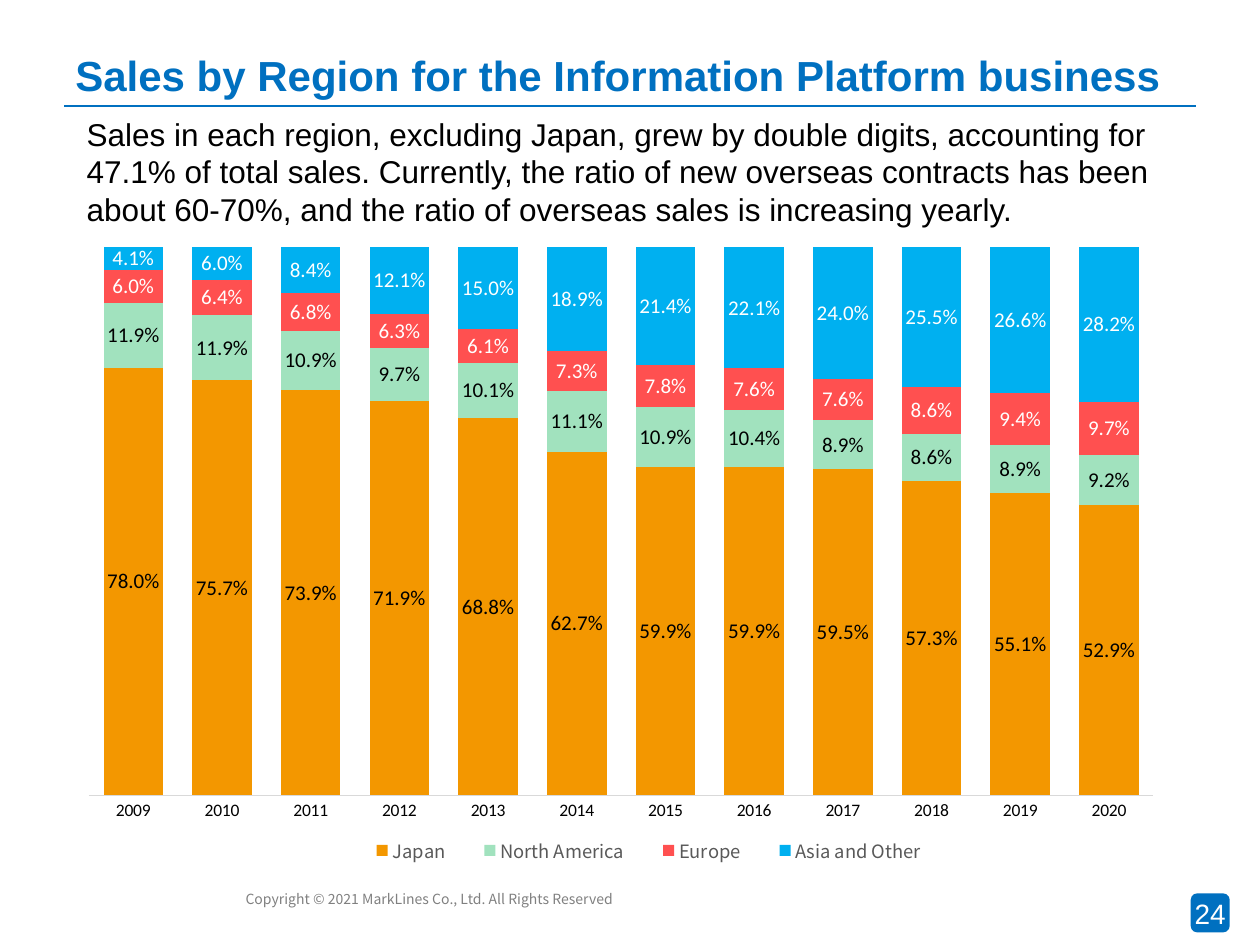
from lxml import etree
from pptx import Presentation
from pptx.chart.data import CategoryChartData
from pptx.dml.color import RGBColor
from pptx.enum.chart import XL_CHART_TYPE, XL_LEGEND_POSITION, XL_TICK_MARK
from pptx.enum.shapes import MSO_CONNECTOR, MSO_SHAPE
from pptx.enum.text import MSO_ANCHOR, PP_ALIGN
from pptx.oxml.ns import qn
from pptx.util import Inches, Pt

STACKED = XL_CHART_TYPE.COLUMN_STACKED_100
BOTTOM = XL_LEGEND_POSITION.BOTTOM
NO_TICK = XL_TICK_MARK.NONE
STRAIGHT = MSO_CONNECTOR.STRAIGHT
ROUNDED = MSO_SHAPE.ROUNDED_RECTANGLE
TOP, MIDDLE = MSO_ANCHOR.TOP, MSO_ANCHOR.MIDDLE
LEFT, CENTER = PP_ALIGN.LEFT, PP_ALIGN.CENTER

WIDE, HIGH = 10, 7.5
COLS, ROWS = 100, 75
COLORS = {
    "blue": "0070C0", "black": "000000", "white": "FFFFFF",
    "gray": "808080", "slate": "595959", "rule": "D9D9D9",
    "orange": "F39700", "green": "A1E2BE", "red": "FF5050", "sky": "00B0F0",
}
FONTS = {
    "title": {"name": "Arial", "size": 24, "bold": True, "color": "blue"},
    "body": {"name": "Arial", "size": 18, "color": "black"},
    "badge": {"name": "Arial", "size": 16, "color": "white"},
    "footer": {"name": "Noto Sans CJK JP", "size": 8, "color": "gray"},
    "legend": {"name": "Noto Sans CJK JP", "size": 10.5, "color": "slate"},
    "axis": {"name": "Calibri", "size": 10, "color": "black"},
    "dark": {"name": "Calibri", "size": 12, "color": "black"},
    "light": {"name": "Calibri", "size": 12, "color": "white"},
}
YEARS = [str(year) for year in range(2009, 2021)]
REGIONS = [
    ("Japan", "orange", "dark",
     [0.78, 0.757, 0.739, 0.719, 0.688, 0.627,
      0.599, 0.599, 0.595, 0.573, 0.551, 0.529]),
    ("North America", "green", "dark",
     [0.119, 0.119, 0.109, 0.097, 0.101, 0.111,
      0.109, 0.104, 0.089, 0.086, 0.089, 0.092]),
    ("Europe", "red", "light",
     [0.06, 0.064, 0.068, 0.063, 0.061, 0.073,
      0.078, 0.076, 0.076, 0.086, 0.094, 0.097]),
    ("Asia and Other", "sky", "light",
     [0.041, 0.06, 0.084, 0.121, 0.15, 0.189,
      0.214, 0.221, 0.24, 0.255, 0.266, 0.282]),
]


class Board:
    def __init__(self, slide):
        self.slide = slide
        self.shapes = slide.shapes

    def place(self, col, row, cols, rows):
        x, y = WIDE / COLS, HIGH / ROWS
        return [Inches(n) for n in (col * x, row * y, cols * x, rows * y)]

    def color(self, name):
        return RGBColor.from_string(COLORS[name])

    def paint(self, fill, name):
        fill.solid()
        fill.fore_color.rgb = self.color(name)

    def style(self, font, kind):
        for key, value in FONTS[kind].items():
            if key == "color":
                font.color.rgb = self.color(value)
            else:
                setattr(font, key, Pt(value) if key == "size" else value)

    def label(self, shape, text, kind, anchor, align, wrap=True):
        frame = shape.text_frame
        frame.word_wrap = wrap
        frame.vertical_anchor = anchor
        line = frame.paragraphs[0]
        line.alignment = align
        run = line.add_run()
        run.text = text
        self.style(run.font, kind)

    def text(self, area, text, kind, anchor=TOP):
        box = self.shapes.add_textbox(*self.place(*area))
        self.label(box, text, kind, anchor, LEFT)

    def badge(self, area, text):
        shape = self.shapes.add_shape(ROUNDED, *self.place(*area))
        shape.shadow.inherit = False
        self.paint(shape.fill, "blue")
        shape.line.fill.background()
        self.label(shape, text, "badge", MIDDLE, CENTER, False)

    def rule(self, col, row, cols):
        x, y, width, _ = self.place(col, row, cols, 0)
        line = self.shapes.add_connector(STRAIGHT, x, y, x + width, y)
        line.line.color.rgb = self.color("blue")
        line.line.width = Pt(1)
        etree.SubElement(line._element.spPr, qn("a:effectLst"))

    def layout(self, parent, index, shares, inner=False):
        for old in parent.findall(qn("c:layout")):
            parent.remove(old)
        node = etree.Element(qn("c:layout"))
        manual = etree.SubElement(node, qn("c:manualLayout"))
        marks = [("layoutTarget", "inner")] if inner else []
        marks += [("xMode", "edge"), ("yMode", "edge")]
        marks += zip("xywh", shares)
        for tag, value in marks:
            etree.SubElement(manual, qn("c:" + tag)).set("val", str(value))
        parent.insert(index, node)

    def chart(self, area, years, regions):
        data = CategoryChartData(number_format="0.0%")
        data.categories = years
        for name, _, _, values in regions:
            data.add_series(name, values)
        frame = self.shapes.add_chart(STACKED, *self.place(*area), data)
        chart = frame.chart
        chart.has_title = False
        self.style(chart.font, "axis")
        plot = chart.plots[0]
        plot.gap_width, plot.overlap = 49, 100
        plot.vary_by_categories = False
        for series, (_, color, kind, _) in zip(plot.series, regions):
            self.paint(series.format.fill, color)
            labels = series.data_labels
            labels.show_value = True
            labels.number_format = "0.0%"
            labels.number_format_is_linked = False
            self.style(labels.font, kind)
        self.axes(chart)
        chart.has_legend = True
        legend = chart.legend
        legend.position = BOTTOM
        legend.include_in_layout = False
        self.style(legend.font, "legend")
        self.layout(legend._element, 1, (0.25, 0.92, 0.55, 0.07))
        field = chart._chartSpace.chart.plotArea
        self.layout(field, 0, (0.02, 0.02, 0.96, 0.85), True)

    def axes(self, chart):
        across, up = chart.category_axis, chart.value_axis
        across.major_tick_mark = across.minor_tick_mark = NO_TICK
        across.format.line.color.rgb = self.color("rule")
        across.format.line.width = Pt(0.75)
        self.style(across.tick_labels.font, "axis")
        up.has_major_gridlines = False
        up.minimum_scale, up.maximum_scale = 0, 1
        up.visible = False


def main():
    deck = Presentation()
    deck.slide_width, deck.slide_height = Inches(WIDE), Inches(HIGH)
    board = Board(deck.slides.add_slide(deck.slide_layouts[6]))
    board.text((18.5, 70.2, 37.8, 2.4),
               "Copyright © 2021 MarkLines Co., Ltd. All Rights Reserved",
               "footer")
    board.rule(5.1, 8.4, 89.8)
    board.text((5, 3.6, 90, 4.6),
               "Sales by Region for the Information Platform business",
               "title", MIDDLE)
    board.badge((94.5, 70.9, 3.1, 3.1), "24")
    board.text((5.9, 8.6, 90.3, 10.1),
               "Sales in each region, excluding Japan, grew by double digits, "
               "accounting for 47.1% of total sales. Currently, the ratio of "
               "new overseas contracts has been about 60-70%, and the ratio "
               "of overseas sales is increasing yearly.", "body")
    board.chart((5.3, 18.6, 88, 51.2), YEARS, REGIONS)
    deck.save("out.pptx")


if __name__ == "__main__":
    main()
